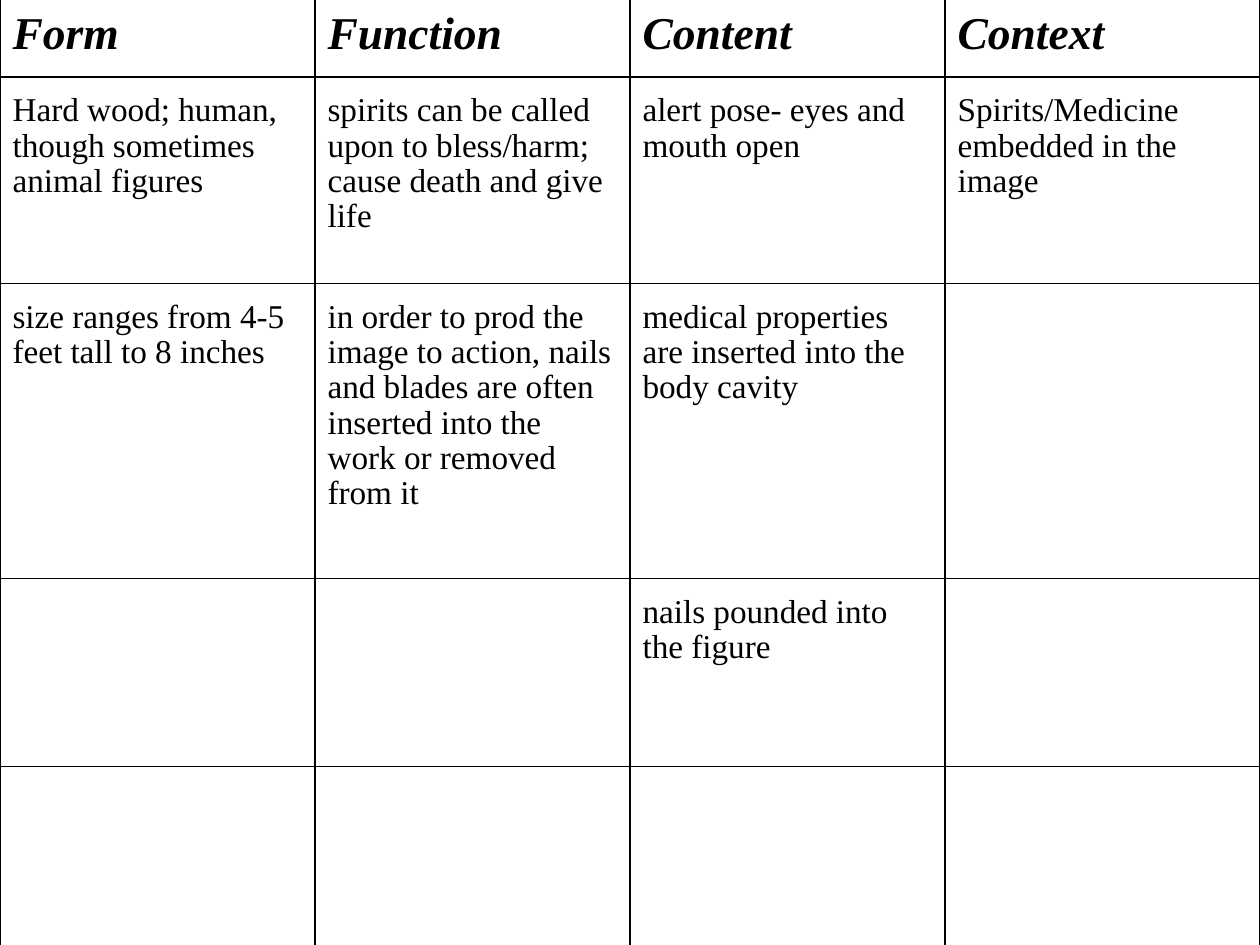
import dataclasses

import lxml.etree
import pptx
import pptx.dml.color
import pptx.oxml.ns
import pptx.util

Pt = pptx.util.Pt


@dataclasses.dataclass(frozen=True)
class Theme:
    font: str = "Times New Roman"
    ink: str = "000000"
    heading_size: float = 26
    body_size: float = 19
    body_spacing: float = 0.96
    rule_width: float = 1
    side_inset: float = 7.2
    end_inset: float = 9.36


THEME = Theme()
HEADINGS = ["Form", "Function", "Content", "Context"]
OBSERVATIONS = [
    [
        "Hard wood; human, though sometimes animal figures",
        "spirits can be called upon to bless/harm; cause death and give life",
        "alert pose- eyes and mouth open",
        "Spirits/Medicine embedded in the image",
    ],
    [
        "size ranges from 4-5 feet tall to 8 inches",
        "in order to prod the image to action, nails and blades are often "
        "inserted into the work or removed from it",
        "medical properties are inserted into the body cavity",
        "",
    ],
    ["", "", "nails pounded into the figure", ""],
    ["", "", "", ""],
]
ROW_HEIGHTS = [48.6, 118, 168.5, 107.5, 107.5]


def write_text(text_frame, text, *, size, bold=False, italic=False, spacing=1.0):
    paragraph = text_frame.paragraphs[0]
    paragraph.line_spacing = spacing
    run = paragraph.add_run()
    run.text = text
    run.font.name = THEME.font
    run.font.size = Pt(size)
    run.font.bold = bold
    run.font.italic = italic
    run.font.color.rgb = pptx.dml.color.RGBColor.from_string(THEME.ink)


def draw_borders(cell):
    qualified = pptx.oxml.ns.qn
    properties = cell._tc.get_or_add_tcPr()
    for position, side in enumerate(("a:lnL", "a:lnR", "a:lnT", "a:lnB")):
        line = lxml.etree.Element(qualified(side), w=str(Pt(THEME.rule_width)))
        fill = lxml.etree.SubElement(line, qualified("a:solidFill"))
        lxml.etree.SubElement(fill, qualified("a:srgbClr"), val=THEME.ink)
        properties.insert(position, line)


def format_cell(cell):
    cell.fill.background()
    cell.margin_left = cell.margin_right = Pt(THEME.side_inset)
    cell.margin_top = cell.margin_bottom = Pt(THEME.end_inset)
    draw_borders(cell)


def add_analysis_table(slide, left, top, width):
    contents = [HEADINGS] + OBSERVATIONS
    shape = slide.shapes.add_table(
        len(contents), len(HEADINGS), Pt(left), Pt(top), Pt(width), Pt(sum(ROW_HEIGHTS))
    )
    table = shape.table
    table.horz_banding = False
    table.first_row = False
    for column in table.columns:
        column.width = Pt(width / len(HEADINGS))
    for row, height in zip(table.rows, ROW_HEIGHTS):
        row.height = Pt(height)
    heading_format = {"size": THEME.heading_size, "bold": True, "italic": True}
    body_format = {"size": THEME.body_size, "spacing": THEME.body_spacing}
    for row_index, texts in enumerate(contents):
        text_format = body_format if row_index else heading_format
        for column_index, text in enumerate(texts):
            cell = table.cell(row_index, column_index)
            format_cell(cell)
            if text:
                write_text(cell.text_frame, text, **text_format)


def main():
    presentation = pptx.Presentation()
    presentation.slide_width = Pt(720)
    presentation.slide_height = Pt(540)
    slide = presentation.slides.add_slide(presentation.slide_layouts[6])
    add_analysis_table(slide, left=0, top=-4.5, width=720)
    presentation.save("out.pptx")


if __name__ == "__main__":
    main()
